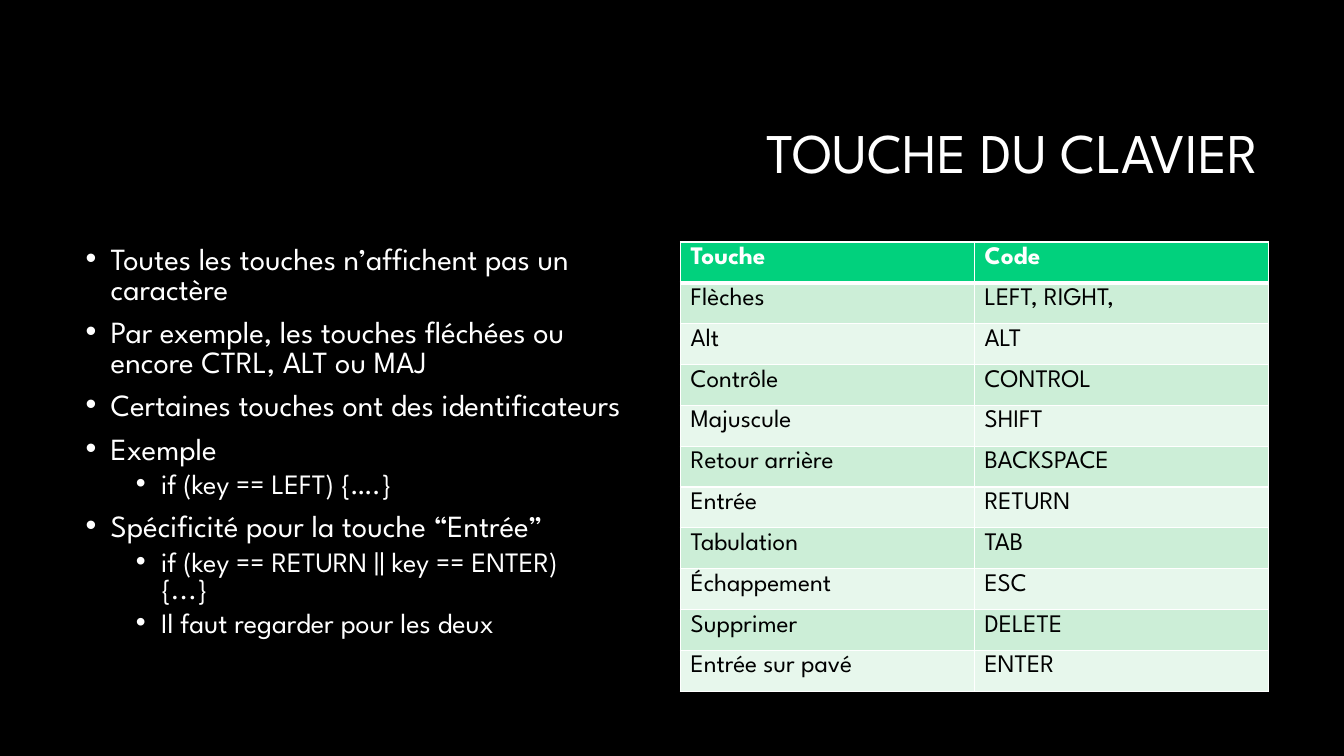
from lxml.etree import SubElement
from pptx import Presentation
from pptx.dml.color import RGBColor
from pptx.enum.text import MSO_ANCHOR, PP_ALIGN
from pptx.oxml.ns import qn
from pptx.util import Inches, Pt

FONT = "League Spartan"
COLORS = {
    "background": "000000",
    "light": "FFFFFF",
    "dark": "000000",
    "header": "01D17D",
    "odd_row": "CCEED7",
    "even_row": "E7F7EC",
}
# Twelve columns, one inch apart, with a gutter at the right of each
MARGIN, GUTTER = 0.75, 0.17
HALF = 6
BODY_TOP = 2.4

TITLE = "TOUCHE DU CLAVIER"
POINTS = [
    (0, "Toutes les touches n’affichent pas un caractère"),
    (0, "Par exemple, les touches fléchées ou encore CTRL, ALT ou MAJ"),
    (0, "Certaines touches ont des identificateurs"),
    (0, "Exemple"),
    (1, "if (key == LEFT) {….}"),
    (0, "Spécificité pour la touche “Entrée”"),
    (1, "if (key == RETURN || key == ENTER)\n{...}"),
    (1, "Il faut regarder pour les deux"),
]
LEVELS = [  # indent in inches, text size and space before in points
    {"indent": 0.25, "size": 22, "before": 10},
    {"indent": 0.75, "size": 20, "before": 5},
]
KEY_CODES = [
    ("Touche", "Code"),
    ("Flèches", "LEFT, RIGHT,"),
    ("Alt", "ALT"),
    ("Contrôle", "CONTROL"),
    ("Majuscule", "SHIFT"),
    ("Retour arrière", "BACKSPACE"),
    ("Entrée", "RETURN"),
    ("Tabulation", "TAB"),
    ("Échappement", "ESC"),
    ("Supprimer", "DELETE"),
    ("Entrée sur pavé", "ENTER"),
]


def rgb(name):
    return RGBColor.from_string(COLORS[name])


def area(column, span, top, height):
    """Left, top, width and height of a stretch of grid columns."""
    return [Inches(n) for n in (MARGIN + column, top, span - GUTTER, height)]


def add_text(paragraph, text, size, color="light", bold=False):
    for number, line in enumerate(text.split("\n")):
        if number:
            paragraph.add_line_break()
        run = paragraph.add_run()
        run.text = line
        run.font.name = FONT
        run.font.size = Pt(size)
        run.font.bold = bold
        run.font.color.rgb = rgb(color)


def add_frame(slide, place):
    frame = slide.shapes.add_textbox(*place).text_frame
    frame.word_wrap = True
    return frame


def add_title(slide, place):
    frame = add_frame(slide, place)
    frame.vertical_anchor = MSO_ANCHOR.MIDDLE
    heading = frame.paragraphs[0]
    heading.alignment = PP_ALIGN.RIGHT
    heading.line_spacing = 0.9
    add_text(heading, TITLE, 40)


def set_bullet(paragraph, indent):
    properties = paragraph._p.get_or_add_pPr()
    properties.set("marL", str(Inches(indent)))
    properties.set("indent", str(Inches(-0.25)))
    SubElement(properties, qn("a:buFont"), typeface="Arial")
    SubElement(properties, qn("a:buChar"), char="•")


def add_points(slide, place):
    frame = add_frame(slide, place)
    for number, (level, text) in enumerate(POINTS):
        point = frame.add_paragraph() if number else frame.paragraphs[0]
        style = LEVELS[level]
        point.level = level
        point.line_spacing = 0.8
        point.space_before = Pt(style["before"] if number else 0)
        set_bullet(point, style["indent"])
        add_text(point, text, style["size"])


def set_borders(cell, **widths):
    """Draw the given sides (L, R, T, B), each with a width in points."""
    properties = cell._tc.get_or_add_tcPr()
    for position, (side, width) in enumerate(widths.items()):
        line = SubElement(properties, qn(f"a:ln{side}"), w=str(Pt(width)))
        fill = SubElement(line, qn("a:solidFill"))
        SubElement(fill, qn("a:srgbClr"), val=COLORS["light"])
        properties.insert(position, line)


def add_key_table(slide, place):
    table = slide.shapes.add_table(len(KEY_CODES), 2, *place).table
    for row, labels in enumerate(KEY_CODES):
        header = row == 0
        band = "header" if header else "odd_row" if row % 2 else "even_row"
        for column, label in enumerate(labels):
            cell = table.cell(row, column)
            cell.fill.solid()
            cell.fill.fore_color.rgb = rgb(band)
            set_borders(cell, L=1, R=1, T=3 if row == 1 else 1, B=3 if header else 1)
            add_text(cell.text_frame.paragraphs[0], label, 18,
                     "light" if header else "dark", header)


def main():
    deck = Presentation()
    deck.slide_width, deck.slide_height = Inches(13.33), Inches(7.5)
    slide = deck.slides.add_slide(deck.slide_layouts[6])
    slide.background.fill.solid()
    slide.background.fill.fore_color.rgb = rgb("background")
    add_title(slide, area(2.42, 9.58, 0.84, 1.41))
    add_points(slide, area(0, HALF, BODY_TOP, 4.4))
    add_key_table(slide, area(HALF, HALF, BODY_TOP, 4.46))
    deck.save("out.pptx")


if __name__ == "__main__":
    main()
